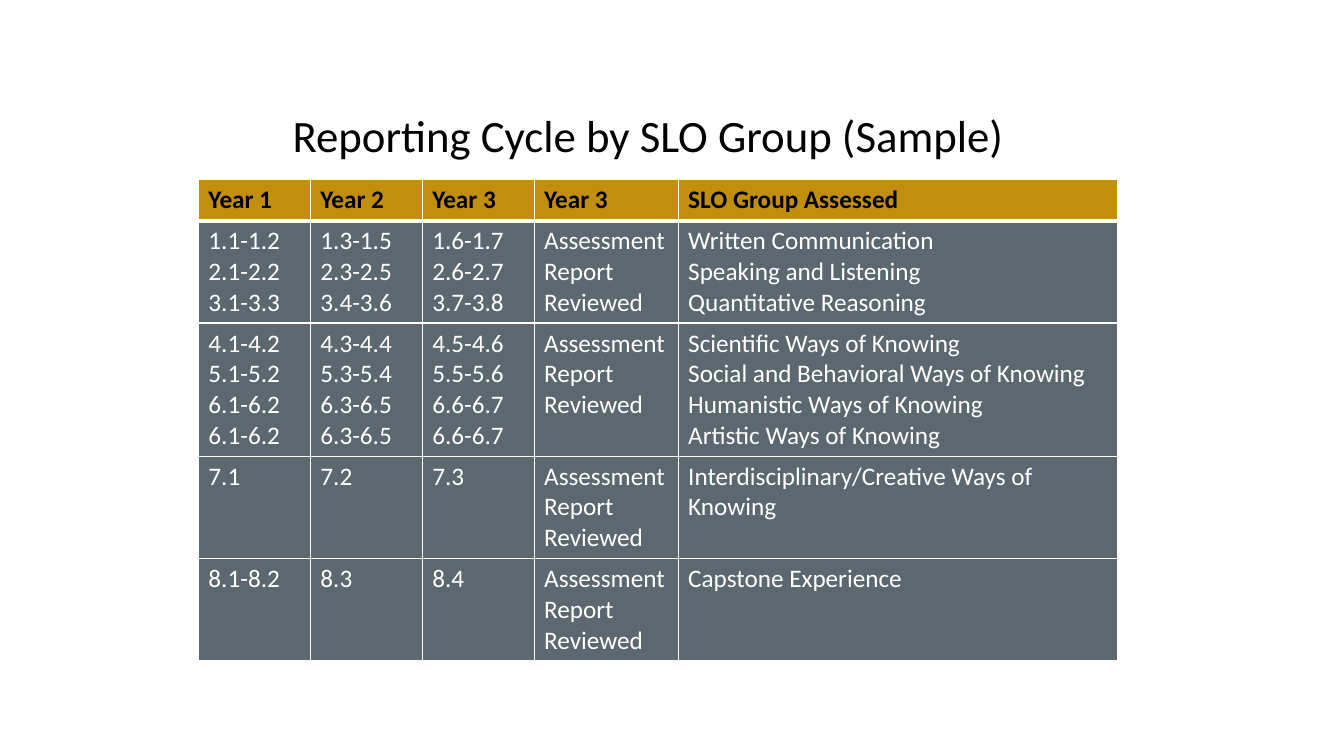
"""Builds the slide with the reporting cycle table."""
from lxml.etree import SubElement as Sub
from pptx import Presentation as Deck
from pptx.dml.color import RGBColor as Rgb
from pptx.enum.text import PP_ALIGN as Align
from pptx.oxml.ns import qn
from pptx.util import Cm, Pt

HUES = {"gold": "C28E0E", "slate": "5B6870", "white": "FFFFFF", "black": "000000"}
WIDTHS = [2.82, 2.82, 2.82, 3.63, 11.07]
HEIGHTS = [1.04, 2.54, 3.3, 2.54, 2.54]
REVIEW = "Assessment\nReport\nReviewed"
ROWS = [
    ["Year 1", "Year 2", "Year 3", "Year 3", "SLO Group Assessed"],
    ["1.1-1.2\n2.1-2.2\n3.1-3.3", "1.3-1.5\n2.3-2.5\n3.4-3.6",
     "1.6-1.7\n2.6-2.7\n3.7-3.8", REVIEW,
     "Written Communication\nSpeaking and Listening\nQuantitative Reasoning"],
    ["4.1-4.2\n5.1-5.2\n6.1-6.2\n6.1-6.2", "4.3-4.4\n5.3-5.4\n6.3-6.5\n6.3-6.5",
     "4.5-4.6\n5.5-5.6\n6.6-6.7\n6.6-6.7", REVIEW,
     "Scientific Ways of Knowing\nSocial and Behavioral Ways of Knowing\n"
     "Humanistic Ways of Knowing\nArtistic Ways of Knowing"],
    ["7.1", "7.2", "7.3", REVIEW, "Interdisciplinary/Creative Ways of Knowing"],
    ["8.1-8.2", "8.3", "8.4", REVIEW, "Capstone Experience"],
]


class Page:
    """Holds the style and the current slide."""

    def __init__(self, slide, font="Calibri"):
        self.slide = slide
        self.font = font

    def style(self, frame, size, hue, bold=False, align=Align.LEFT):
        """Formats all the text in a frame."""
        for para in frame.paragraphs:
            para.alignment = align
            for run in para.runs:
                run.font.name = self.font
                run.font.size = Pt(size)
                run.font.bold = bold
                run.font.color.rgb = Rgb.from_string(HUES[hue])

    def title(self, text, left, top, width, height):
        """Adds a centred heading."""
        box = self.slide.shapes.add_textbox(Cm(left), Cm(top), Cm(width), Cm(height))
        frame = box.text_frame
        frame.word_wrap = True
        frame.text = text
        self.style(frame, 32, "black", align=Align.CENTER)

    def edge(self, cell, side, width):
        """Draws one white border of a cell."""
        line = Sub(cell._tc.get_or_add_tcPr(), qn("a:ln" + side), w=str(Pt(width)))
        fill = Sub(line, qn("a:solidFill"))
        Sub(fill, qn("a:srgbClr"), val=HUES["white"])

    def cell(self, cell, text, row):
        """Fills one cell, as a header in the first row."""
        head = row == 0
        cell.text_frame.text = text
        self.style(cell.text_frame, 18, "black" if head else "white", head)
        for side in "LRTB":
            thick = (side, row) in (("B", 0), ("T", 1))
            self.edge(cell, side, 3 if thick else 1)
        cell.fill.solid()
        cell.fill.fore_color.rgb = Rgb.from_string(HUES["gold" if head else "slate"])

    def table(self, rows, left, top, widths, heights):
        """Adds a table with a header row."""
        grid = self.slide.shapes.add_table(
            len(rows), len(widths), Cm(left), Cm(top), Cm(sum(widths)), Cm(sum(heights))
        ).table
        for col, width in zip(grid.columns, widths):
            col.width = Cm(width)
        for row, height in zip(grid.rows, heights):
            row.height = Cm(height)
        for i, row in enumerate(rows):
            for j, text in enumerate(row):
                self.cell(grid.cell(i, j), text, i)


def main():
    """Builds and saves the deck."""
    deck = Deck()
    deck.slide_width, deck.slide_height = Cm(33.87), Cm(19.05)
    page = Page(deck.slides.add_slide(deck.slide_layouts[6]))
    page.table(ROWS, 5, 4.52, WIDTHS, HEIGHTS)
    page.title("Reporting Cycle by SLO Group (Sample)", 5, 2.59, 22.68, 1.63)
    deck.save("out.pptx")


if __name__ == "__main__":
    main()
